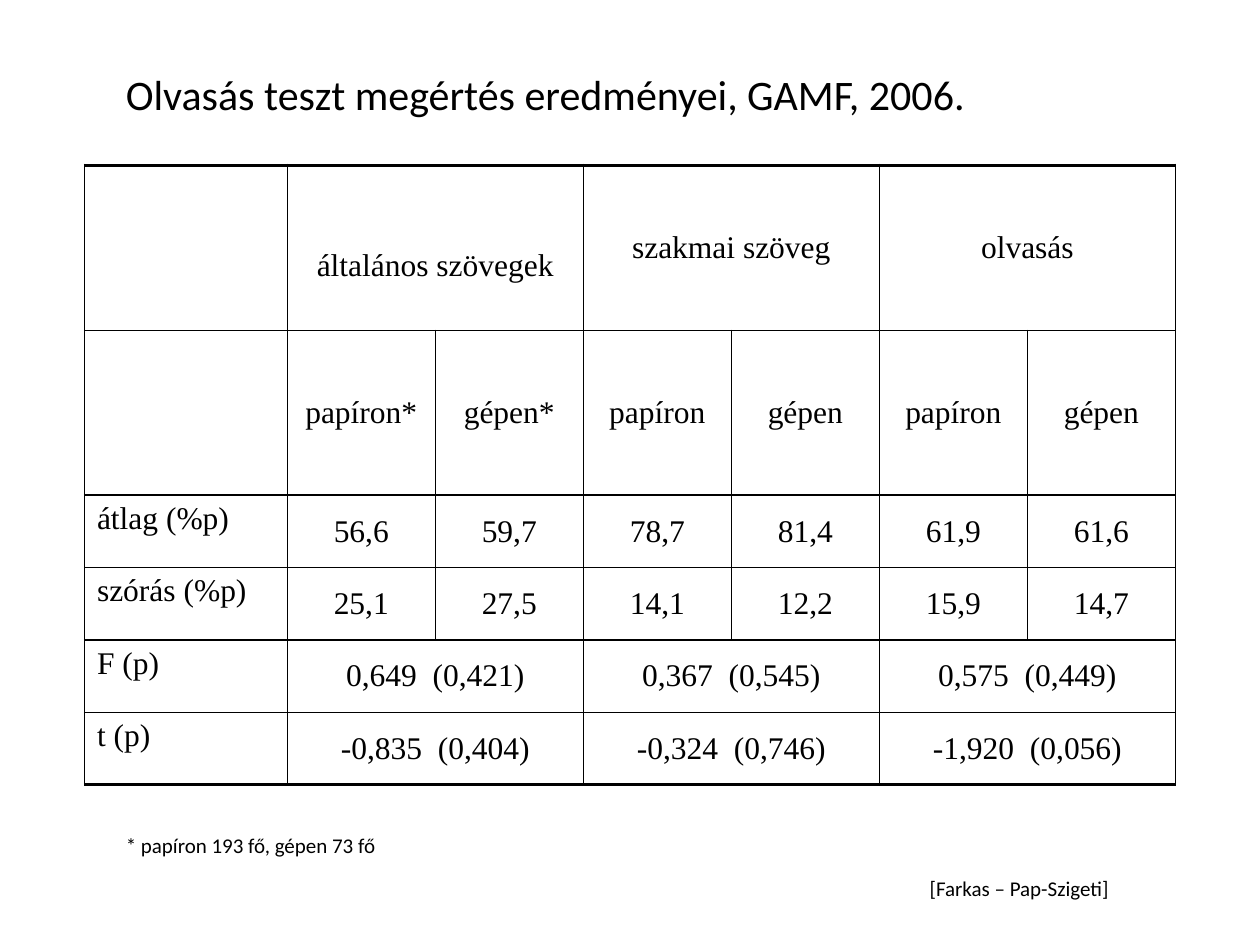
from lxml import etree
from pptx import Presentation
from pptx.dml.color import RGBColor
from pptx.enum.text import MSO_ANCHOR, PP_ALIGN
from pptx.oxml.ns import qn
from pptx.util import Inches, Pt

MIDDLE, TOP = MSO_ANCHOR.MIDDLE, MSO_ANCHOR.TOP
LEFT, CENTER, JUSTIFY = PP_ALIGN.LEFT, PP_ALIGN.CENTER, PP_ALIGN.JUSTIFY
BLACK = "000000"
THIN, RULE, THICK = 0.75, 1, 2

COLUMN_WIDTHS = [1.61] + [1.175] * 6
ROW_HEIGHTS = [1.31] * 2 + [0.575] * 4
# A row with three values spans each value over a pair of columns
ROWS = [
    ("", ["általános szövegek", "szakmai szöveg", "olvasás"]),
    ("", ["papíron*", "gépen*", "papíron", "gépen", "papíron", "gépen"]),
    ("átlag (%p)", ["56,6", "59,7", "78,7", "81,4", "61,9", "61,6"]),
    ("szórás (%p)", ["25,1", "27,5", "14,1", "12,2", "15,9", "14,7"]),
    ("F (p)", ["0,649  (0,421)", "0,367  (0,545)", "0,575  (0,449)"]),
    ("t (p)", ["-0,835  (0,404)", "-0,324  (0,746)", "-1,920  (0,056)"]),
]
# Widths of the horizontal lines, from the top edge to the bottom edge
LINE_WIDTHS = [THICK, THIN, RULE, THIN, THIN, THIN, THICK]


def color(hex_value):
    return RGBColor.from_string(hex_value)


def format_text(text_frame, font_name, size, alignment):
    for paragraph in text_frame.paragraphs:
        paragraph.alignment = alignment
        paragraph.font.size = Pt(size)
        for run in paragraph.runs:
            run.font.name = font_name
            run.font.size = Pt(size)
            run.font.color.rgb = color(BLACK)


def add_text(slide, box, text, size, alignment=LEFT, anchor=MIDDLE):
    shape = slide.shapes.add_textbox(*(Inches(length) for length in box))
    text_frame = shape.text_frame
    text_frame.word_wrap = True
    text_frame.vertical_anchor = anchor
    text_frame.text = text
    format_text(text_frame, "Calibri", size, alignment)


def set_borders(cell, top, bottom):
    properties = cell._tc.get_or_add_tcPr()
    sides = [("a:lnL", THIN), ("a:lnR", THIN), ("a:lnT", top), ("a:lnB", bottom)]
    for index, (tag, width) in enumerate(sides):
        line = etree.Element(qn(tag), w=str(Pt(width)))
        fill = etree.SubElement(line, qn("a:solidFill"))
        etree.SubElement(fill, qn("a:srgbClr"), val=BLACK)
        properties.insert(index, line)


def fill_cell(cell, text, alignment, anchor):
    cell.text_frame.text = text
    cell.vertical_anchor = anchor
    format_text(cell.text_frame, "Times New Roman", 18, alignment)


def add_results_table(slide, box):
    frame = slide.shapes.add_table(
        len(ROW_HEIGHTS), len(COLUMN_WIDTHS), *(Inches(length) for length in box))
    table = frame.table
    table.first_row = table.horz_banding = False
    for column, width in zip(table.columns, COLUMN_WIDTHS):
        column.width = Inches(width)
    for row, height in zip(table.rows, ROW_HEIGHTS):
        row.height = Inches(height)

    for row_index, (label, values) in enumerate(ROWS):
        for cell in table.rows[row_index].cells:
            cell.fill.background()
            set_borders(cell, LINE_WIDTHS[row_index], LINE_WIDTHS[row_index + 1])
        fill_cell(table.cell(row_index, 0), label, JUSTIFY, TOP)
        span = 6 // len(values)
        for value_index, value in enumerate(values):
            first = 1 + value_index * span
            cell = table.cell(row_index, first)
            if span > 1:
                cell.merge(table.cell(row_index, first + span - 1))
            fill_cell(cell, value, CENTER, MIDDLE)

    # The first group heading sits half a line lower than the others
    table.cell(0, 1).margin_top = Inches(0.34)


def build_slide(presentation):
    slide = presentation.slides.add_slide(presentation.slide_layouts[6])
    # Title
    add_text(slide, (0.9, 0.49, 7.69, 0.5),
             "Olvasás teszt megértés eredményei, GAMF, 2006.", 24)
    # Test results
    add_results_table(slide, (0.67, 1.31, 8.66, 4.92))
    # Footnote and source
    add_text(slide, (0.9, 6.56, 2.34, 0.3),
             "* papíron 193 fő, gépen 73 fő", 12, JUSTIFY)
    add_text(slide, (7.28, 6.9, 2.44, 0.6), "[Farkas – Pap-Szigeti]", 12, anchor=TOP)


def main():
    presentation = Presentation()
    presentation.slide_width = Inches(10)
    presentation.slide_height = Inches(7.5)
    build_slide(presentation)
    presentation.save("out.pptx")


if __name__ == "__main__":
    main()
